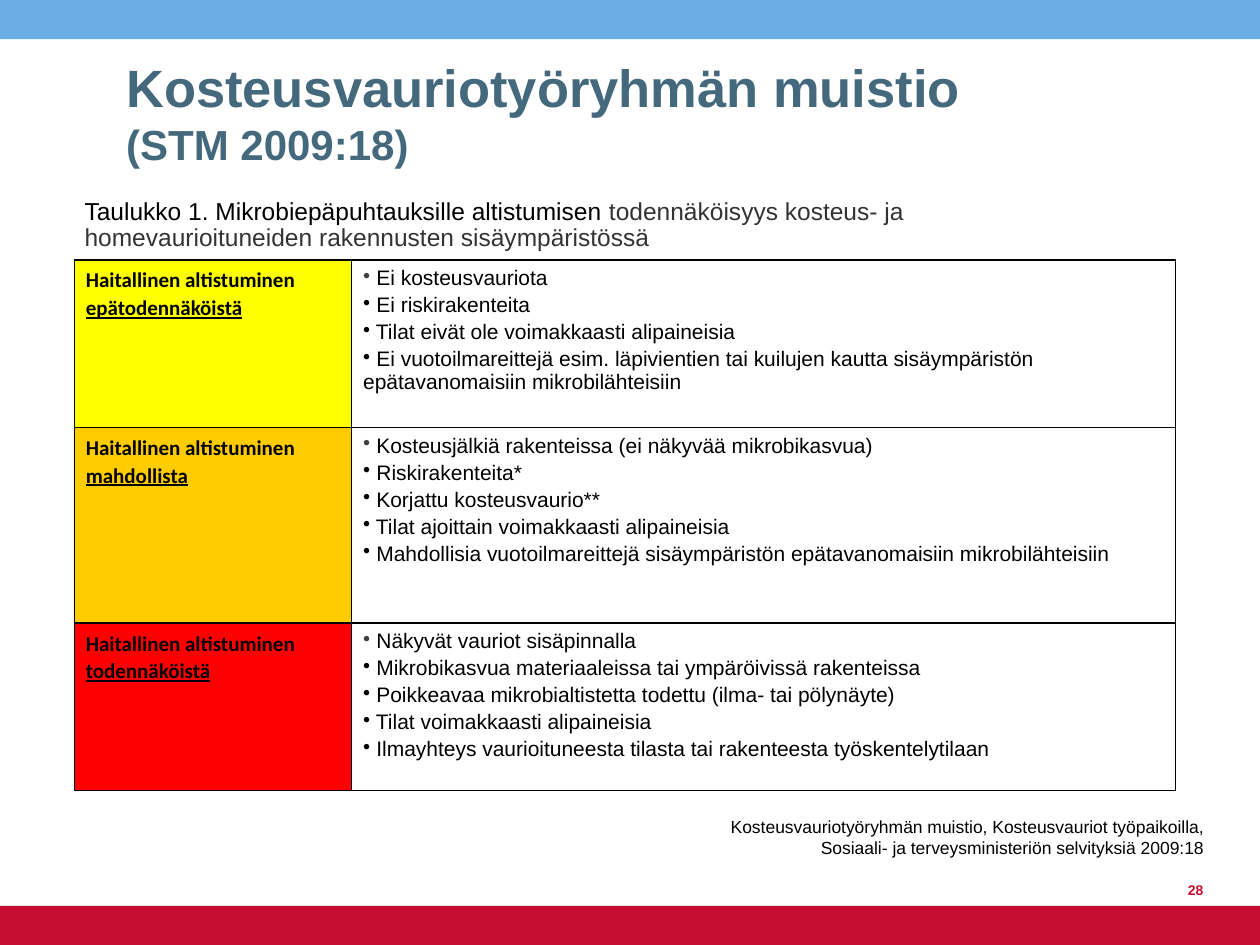
"""Build the slide on the probability of microbial exposure in damp buildings."""
from lxml import etree
from pptx import Presentation
from pptx import util as u
from pptx.dml.color import RGBColor
from pptx.enum import shapes, text
from pptx.oxml import ns

BLUE = RGBColor(0x6A, 0xAD, 0xE4)
CRIMSON = RGBColor(0xC6, 0x0C, 0x30)
SLATE = RGBColor(0x44, 0x69, 0x7D)
BLACK = RGBColor(0, 0, 0)
WHITE = RGBColor(0xFF, 0xFF, 0xFF)
GREY = RGBColor(0x33, 0x33, 0x33)
BULLET_GREY = RGBColor(0x40, 0x40, 0x40)
YELLOW = RGBColor(0xFF, 0xFF, 0)
ORANGE = RGBColor(0xFF, 0xCC, 0)
RED = RGBColor(0xFF, 0, 0)

RISKS = [
    ("epätodennäköistä", YELLOW, 3.38, [
        "Ei kosteusvauriota",
        "Ei riskirakenteita",
        "Tilat eivät ole voimakkaasti alipaineisia",
        "Ei vuotoilmareittejä esim. läpivientien tai kuilujen kautta sisäympäristön "
        "epätavanomaisiin mikrobilähteisiin",
    ]),
    ("mahdollista", ORANGE, 3.94, [
        "Kosteusjälkiä rakenteissa (ei näkyvää mikrobikasvua)",
        "Riskirakenteita*",
        "Korjattu kosteusvaurio**",
        "Tilat ajoittain voimakkaasti alipaineisia",
        "Mahdollisia vuotoilmareittejä sisäympäristön epätavanomaisiin mikrobilähteisiin",
    ]),
    ("todennäköistä", RED, 3.38, [
        "Näkyvät vauriot sisäpinnalla",
        "Mikrobikasvua materiaaleissa tai ympäröivissä rakenteissa",
        "Poikkeavaa mikrobialtistetta todettu (ilma- tai pölynäyte)",
        "Tilat voimakkaasti alipaineisia",
        "Ilmayhteys vaurioituneesta tilasta tai rakenteesta työskentelytilaan",
    ]),
]


def format_run(run, size, color, bold=False, name="Arial"):
    run.font.name = name
    run.font.size = u.Pt(size)
    run.font.bold = bold
    run.font.color.rgb = color


def add_element(parent, tag, **attributes):
    return etree.SubElement(parent, ns.qn(tag), attributes)


presentation = Presentation()
presentation.slide_width, presentation.slide_height = u.Cm(25.4), u.Cm(19.05)
slide = presentation.slides.add_slide(presentation.slide_layouts[1])

for top, color in ((0, BLUE), (18.26, CRIMSON)):
    bar = slide.shapes.add_shape(
        shapes.MSO_SHAPE.RECTANGLE, 0, u.Cm(top), u.Cm(25.4), u.Cm(0.79))
    bar.shadow.inherit = False
    bar.fill.solid()
    bar.fill.fore_color.rgb = color
    bar.line.fill.background()

title = slide.shapes.title
title.left, title.top, title.width, title.height = u.Cm(2.29), u.Cm(1.32), u.Cm(20.8), u.Cm(2.21)
title.text_frame.text = "Kosteusvauriotyöryhmän muistio\v(STM 2009:18)"
title.text_frame.auto_size = text.MSO_AUTO_SIZE.NONE
title.text_frame.vertical_anchor = text.MSO_ANCHOR.BOTTOM
paragraph = title.text_frame.paragraphs[0]
paragraph.alignment = text.PP_ALIGN.LEFT
for run, size in zip(paragraph.runs, (30, 24)):
    format_run(run, size, SLATE, bold=True)

table_shape = slide.shapes.add_table(
    len(RISKS), 2, u.Cm(1.5), u.Cm(5.24), u.Cm(22.2), u.Cm(10.7))
table = table_shape.table
table.first_row = table.horz_banding = False
table.columns[0].width, table.columns[1].width = u.Cm(5.59), u.Cm(16.61)

for row, (likelihood, color, height, findings) in zip(table.rows, RISKS):
    row.height = u.Cm(height)
    label_cell, findings_cell = row.cells

    paragraph = label_cell.text_frame.paragraphs[0]
    paragraph.line_spacing = 1.07
    paragraph.space_after = u.Pt(8)
    for words, underline in (("Haitallinen altistuminen ", False), (likelihood, True)):
        run = paragraph.add_run()
        run.text = words
        format_run(run, 12, BLACK, bold=True, name="Calibri")
        run.font.underline = underline

    findings_cell.text_frame.text = "\n".join(" " + finding for finding in findings)
    for index, paragraph in enumerate(findings_cell.text_frame.paragraphs):
        properties = paragraph._p.get_or_add_pPr()
        bullet_color = add_element(properties, "a:buClr")
        add_element(bullet_color, "a:srgbClr", val=str(BLACK if index else BULLET_GREY))
        add_element(properties, "a:buChar", char="•")
        if index:
            paragraph.space_before = u.Pt(2)
        format_run(paragraph.runs[0], 12, BLACK)

    for cell, fill in ((label_cell, color), (findings_cell, WHITE)):
        cell.margin_left = cell.margin_right = u.Cm(0.23)
        properties = cell._tc.get_or_add_tcPr()
        for side in ("a:lnL", "a:lnR", "a:lnT", "a:lnB"):
            border = add_element(properties, side, w=str(u.Pt(1)))
            border_fill = add_element(border, "a:solidFill")
            add_element(border_fill, "a:srgbClr", val=str(BLACK))
        cell.fill.solid()
        cell.fill.fore_color.rgb = fill

caption = slide.placeholders[1]
caption.left, caption.top, caption.width, caption.height = (
    u.Cm(0.71), u.Cm(3.89), u.Cm(21.23), u.Cm(1.45))
caption.text_frame.auto_size = text.MSO_AUTO_SIZE.NONE
paragraph = caption.text_frame.paragraphs[0]
properties = paragraph._p.get_or_add_pPr()
properties.set("marL", str(u.Cm(0.74)))
properties.set("indent", "0")
add_element(properties, "a:buNone")
paragraph.line_spacing = 0.9
paragraph.space_before = u.Pt(0)
for words, color in (
    ("Taulukko 1. Mikrobiepäpuhtauksille altistumisen ", BLACK),
    ("todennäköisyys kosteus- ja homevaurioituneiden rakennusten sisäympäristössä", GREY),
):
    run = paragraph.add_run()
    run.text = words
    format_run(run, 14, color)

SOURCE = ("Kosteusvauriotyöryhmän muistio, Kosteusvauriot työpaikoilla,\n"
          "Sosiaali- ja terveysministeriön selvityksiä 2009:18")
for words, left, top, width, size, color, bold in (
    (SOURCE, 9.91, 16.41, 14.6, 10, BLACK, False),
    ("28", 23.11, 17.22, 1.4, 8, CRIMSON, True),
):
    box = slide.shapes.add_textbox(u.Cm(left), u.Cm(top), u.Cm(width), u.Cm(1.02))
    box.text_frame.word_wrap = True
    box.text_frame.vertical_anchor = text.MSO_ANCHOR.BOTTOM
    box.text_frame.text = words
    for paragraph in box.text_frame.paragraphs:
        paragraph.alignment = text.PP_ALIGN.RIGHT
        format_run(paragraph.runs[0], size, color, bold)

presentation.save("out.pptx")
